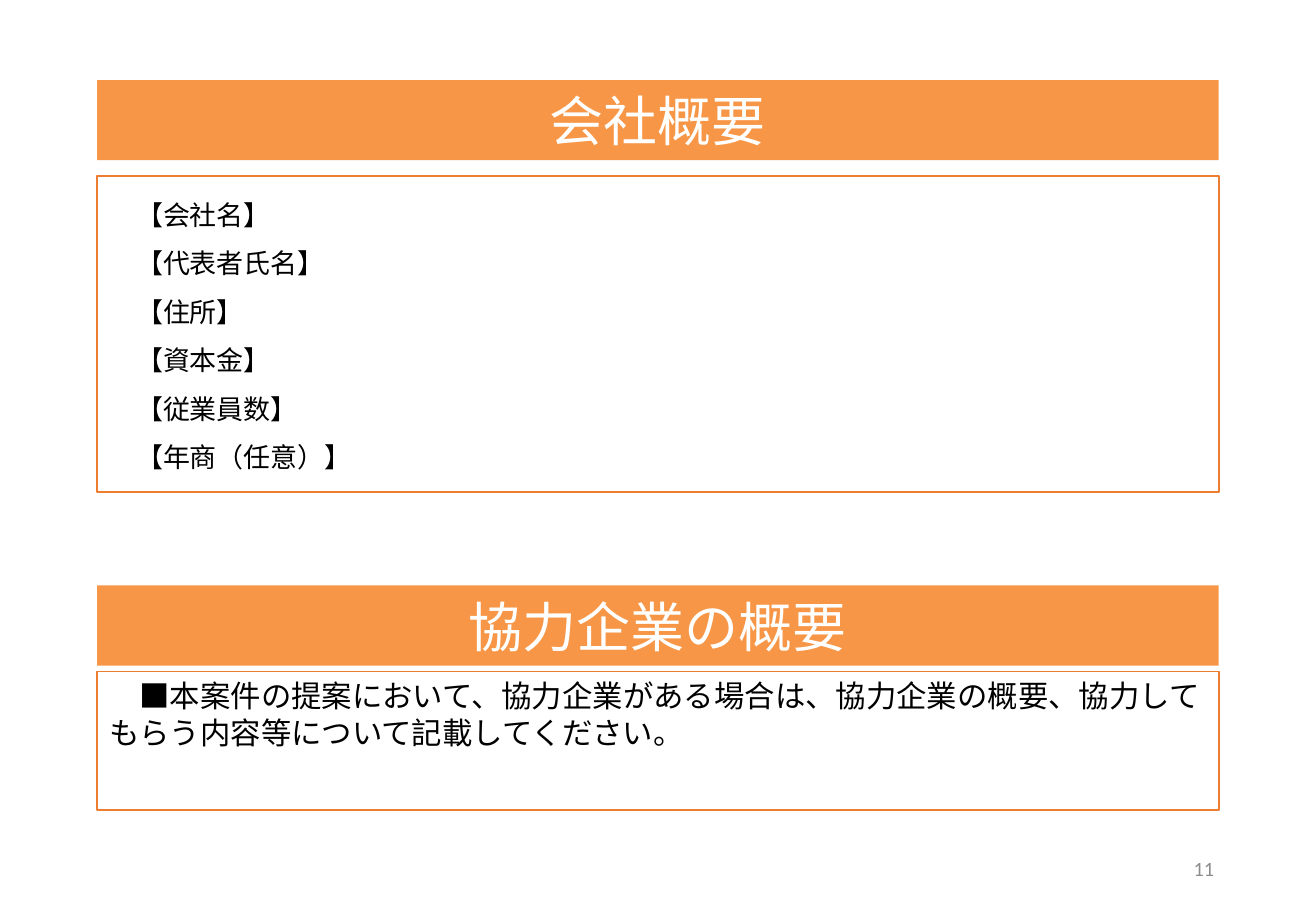
from lxml import etree
from pptx import Presentation, util as u
from pptx.dml.color import RGBColor
from pptx.enum import shapes, text
from pptx.oxml.ns import qn

WIDE, HIGH = 10.83, 7.5
LEFT, SPAN, BAND = 0.8, 9.23, 0.66
CJK = "Noto Sans CJK JP"
HUES = {"band": "F79646", "edge": "ED7D31", "white": "FFFFFF",
        "ink": "000000", "page": "8C8C8C"}

PARTS = [
    {"title": "会社概要", "top": 0.66, "gap": 0.13, "high": 2.6,
     "lines": ["【会社名】", "【代表者氏名】", "【住所】", "【資本金】",
               "【従業員数】", "【年商（任意）】"],
     "look": {"size": 16, "space": 1.5}},
    {"title": "協力企業の概要", "top": 4.82, "gap": 0.05, "high": 1.14,
     "lines": ["■本案件の提案において、協力企業がある場合は、協力企業の概要、"
               "協力してもらう内容等について記載してください。"],
     "look": {"size": 18}},
]
PAGE = "11"


def color(key):
    return RGBColor.from_string(HUES[key])


def write(shape, lines, size, hue="ink", font=CJK, align="LEFT",
          anchor="TOP", space=None, indent=0, inset=None):
    frame = shape.text_frame
    frame.word_wrap = True
    frame.vertical_anchor = text.MSO_ANCHOR[anchor]
    if inset is not None:
        frame.margin_left = frame.margin_right = u.Inches(inset)
        frame.margin_top = frame.margin_bottom = u.Inches(inset)
    for i, line in enumerate(lines):
        para = frame.add_paragraph() if i else frame.paragraphs[0]
        para.alignment = text.PP_ALIGN[align]
        if space:
            para.line_spacing = space
        if indent:
            para._p.get_or_add_pPr().set("indent", str(u.Pt(indent)))
        run = para.add_run()
        run.text = line
        run.font.size = u.Pt(size)
        run.font.name = font
        run.font.color.rgb = color(hue)
        east = etree.SubElement(run._r.get_or_add_rPr(), qn("a:ea"))
        east.set("typeface", font)


def block(slide, top, high, fill, edge=None):
    box = slide.shapes.add_shape(
        shapes.MSO_SHAPE.RECTANGLE,
        *map(u.Inches, (LEFT, top, SPAN, high)))
    box.shadow.inherit = False
    box.fill.solid()
    box.fill.fore_color.rgb = color(fill)
    if edge:
        box.line.color.rgb = color(edge)
        box.line.width = u.Pt(1)
    else:
        box.line.fill.background()
    return box


def main():
    deck = Presentation()
    deck.slide_width, deck.slide_height = u.Inches(WIDE), u.Inches(HIGH)
    slide = deck.slides.add_slide(deck.slide_layouts[6])
    for part in PARTS:
        band = block(slide, part["top"], BAND, "band")
        write(band, [part["title"]], 32, hue="white", align="CENTER",
              anchor="MIDDLE", inset=0)
        top = part["top"] + BAND + part["gap"]
        body = block(slide, top, part["high"], "white", "edge")
        write(body, part["lines"], indent=part["look"]["size"], **part["look"])
    foot = slide.shapes.add_textbox(*map(u.Inches, (7.65, 6.95, 2.44, 0.4)))
    write(foot, [PAGE], 12, hue="page", font="Calibri", align="RIGHT",
          anchor="MIDDLE")
    deck.save("out.pptx")


if __name__ == "__main__":
    main()
